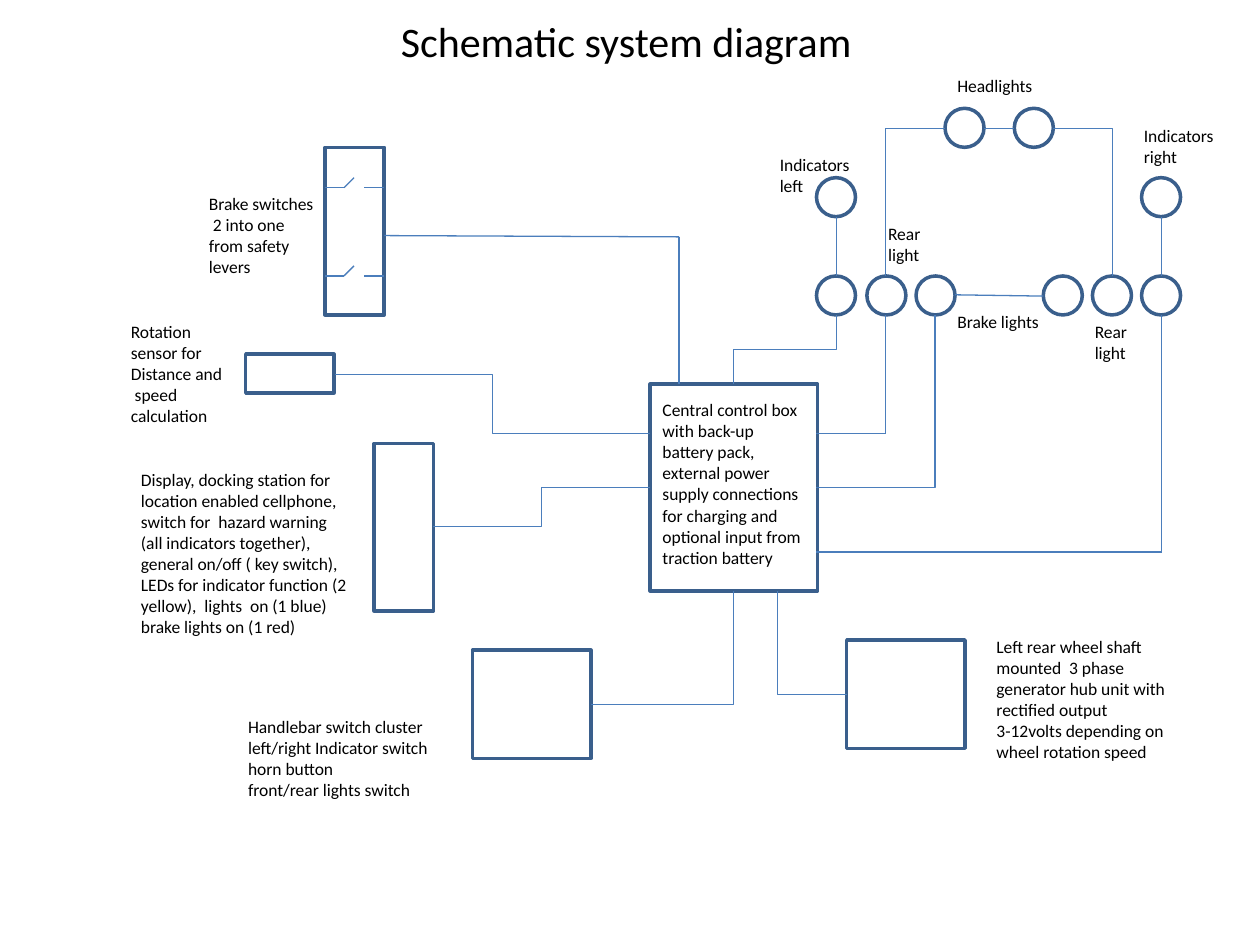
from pptx import Presentation
from pptx.dml.color import RGBColor
from pptx.enum.shapes import MSO_CONNECTOR, MSO_SHAPE
from pptx.enum.text import MSO_ANCHOR, PP_ALIGN
from pptx.oxml.ns import qn
from pptx.util import Inches, Pt
from lxml.etree import SubElement

OUTLINE = RGBColor(0x3A, 0x5F, 0x8C)
WIRE = RGBColor(0x4B, 0x7E, 0xBC)
BLACK = RGBColor(0, 0, 0)
LAMP_SIZE = 0.31

LAMPS = [(7.5, 0.86), (8.05, 0.86), (6.48, 1.41), (9.06, 1.41)] + [
    (x, 2.19) for x in (6.48, 6.88, 7.27, 8.28, 8.67, 9.06)]

BOXES = [
    (2.58, 1.17, 0.47, 1.33),
    (1.95, 2.81, 0.7, 0.31),
    (2.97, 3.52, 0.47, 1.33),
    (5.16, 3.05, 1.33, 1.64),
    (3.75, 5.16, 0.94, 0.86),
    (6.72, 5.08, 0.94, 0.86),
]

STRAIGHT_WIRES = [
    (6.64, 1.72, 6.64, 2.19),
    (9.22, 1.72, 9.22, 2.19),
    (7.81, 1.02, 8.05, 1.02),
    (7.58, 2.34, 8.28, 2.35),
    (7.03, 2.5, 7.03, 3.44),
    (7.03, 3.44, 6.48, 3.44),
    (9.22, 2.5, 9.22, 4.38),
    (9.22, 4.38, 6.48, 4.38),
    (3.05, 1.87, 5.39, 1.88),
    (5.39, 1.88, 5.39, 3.05),
]

CORNER_WIRES = [
    (4.69, 5.59, 5.82, 4.69),
    (7.5, 1.02, 7.03, 2.19),
    (8.36, 1.02, 8.83, 2.19),
    (6.48, 3.87, 7.42, 2.5),
    (6.72, 5.51, 6.17, 4.69),
]

STEP_WIRES = [(3.44, 4.18, 5.16, 3.87), (2.66, 2.97, 5.16, 3.44)]

LABELS = [
    (1.87, 5.63, 1.72, 0.77, "Handlebar switch cluster left/right Indicator switch "
                             "horn button\tfront/rear lights switch"),
    (1.56, 1.48, 1.09, 0.77, "Brake switches\n 2 into one\vfrom safety levers"),
    (7.5, 0.55, 0.94, 0.27, "Headlights"),
    (7.5, 2.42, 0.94, 0.27, "Brake lights"),
    (8.59, 2.5, 0.55, 0.44, "Rear light"),
    (6.95, 1.72, 0.55, 0.44, "Rear light"),
    (8.98, 0.94, 0.78, 0.44, "Indicators right"),
    (6.09, 1.17, 0.78, 0.44, "Indicators left"),
    (1.02, 3.67, 1.88, 1.45, "Display, docking station for\vlocation enabled cellphone, "
                             "switch for  hazard warning\v(all indicators together), "
                             "general on/off ( key switch), LEDs for indicator function "
                             "(2 yellow),  lights  on (1 blue) brake lights on (1 red)"),
    (0.94, 2.5, 0.94, 0.94, "Rotation sensor for\nDistance and\v speed calculation"),
    (5.16, 3.12, 1.33, 1.45, "Central control box with back-up battery pack, external "
                             "power supply connections for charging and optional input "
                             "from traction battery"),
    (7.81, 5, 1.72, 1.11, "Left rear wheel shaft mounted  3 phase generator hub unit "
                          "with rectified output\v3-12volts depending on wheel "
                          "rotation speed"),
]


def add_outline(s, kind, x, y, w, h):
    sp = s.shapes.add_shape(kind, Inches(x), Inches(y), Inches(w), Inches(h))
    sp.shadow.inherit = False
    sp.fill.background()
    sp.line.color.rgb = OUTLINE
    sp.line.width = Pt(2)


def add_wire(s, x1, y1, x2, y2, kind=MSO_CONNECTOR.STRAIGHT):
    cxn = s.shapes.add_connector(kind, Inches(x1), Inches(y1), Inches(x2), Inches(y2))
    cxn.line.color.rgb = WIRE
    cxn.line.width = Pt(0.75)
    SubElement(cxn._element.spPr, qn("a:effectLst"))
    return cxn


def add_corner(s, x1, y1, x2, y2):
    cxn = add_wire(s, x1, y1, x2, y2, MSO_CONNECTOR.ELBOW)
    cxn._element.spPr.find(qn("a:prstGeom")).set("prst", "bentConnector2")


def add_vertical_step(s, x1, y1, x2, y2):
    cx, cy = (x1 + x2) / 2, (y1 + y2) / 2
    dx, dy = (x2 - x1) / 2, (y2 - y1) / 2
    cxn = add_wire(s, cx - dy, cy + dx, cx + dy, cy - dx, MSO_CONNECTOR.ELBOW)
    cxn._element.spPr.find(qn("a:xfrm")).set("rot", "5400000")


def add_switch(s, y):
    add_wire(s, 2.58, y, 2.73, y)
    add_wire(s, 2.73, y, 2.81, y - 0.08)
    add_wire(s, 2.89, y, 3.05, y)


def add_label(s, x, y, w, h, text, size=10, align=PP_ALIGN.LEFT, anchor=MSO_ANCHOR.TOP):
    tf = s.shapes.add_textbox(Inches(x), Inches(y), Inches(w), Inches(h)).text_frame
    tf.word_wrap = True
    tf.vertical_anchor = anchor
    tf.text = text
    for p in tf.paragraphs:
        p.alignment = align
        for r in p.runs:
            r.font.name = "Calibri"
            r.font.size = Pt(size)
            r.font.color.rgb = BLACK


def main():
    prs = Presentation()
    prs.slide_width, prs.slide_height = Inches(10), Inches(7.5)
    s = prs.slides.add_slide(prs.slide_layouts[6])
    add_label(s, 0.47, 0, 9, 0.64, "Schematic system diagram", 24,
              PP_ALIGN.CENTER, MSO_ANCHOR.MIDDLE)
    for x, y in LAMPS:
        add_outline(s, MSO_SHAPE.OVAL, x, y, LAMP_SIZE, LAMP_SIZE)
    for box in BOXES:
        add_outline(s, MSO_SHAPE.RECTANGLE, *box)
    for wire in STRAIGHT_WIRES:
        add_wire(s, *wire)
    for wire in CORNER_WIRES:
        add_corner(s, *wire)
    for wire in STEP_WIRES:
        add_wire(s, *wire, MSO_CONNECTOR.ELBOW)
    add_vertical_step(s, 5.82, 3.05, 6.64, 2.5)
    for y in (1.49, 2.19):
        add_switch(s, y)
    for label in LABELS:
        add_label(s, *label)
    prs.save("out.pptx")


if __name__ == "__main__":
    main()
